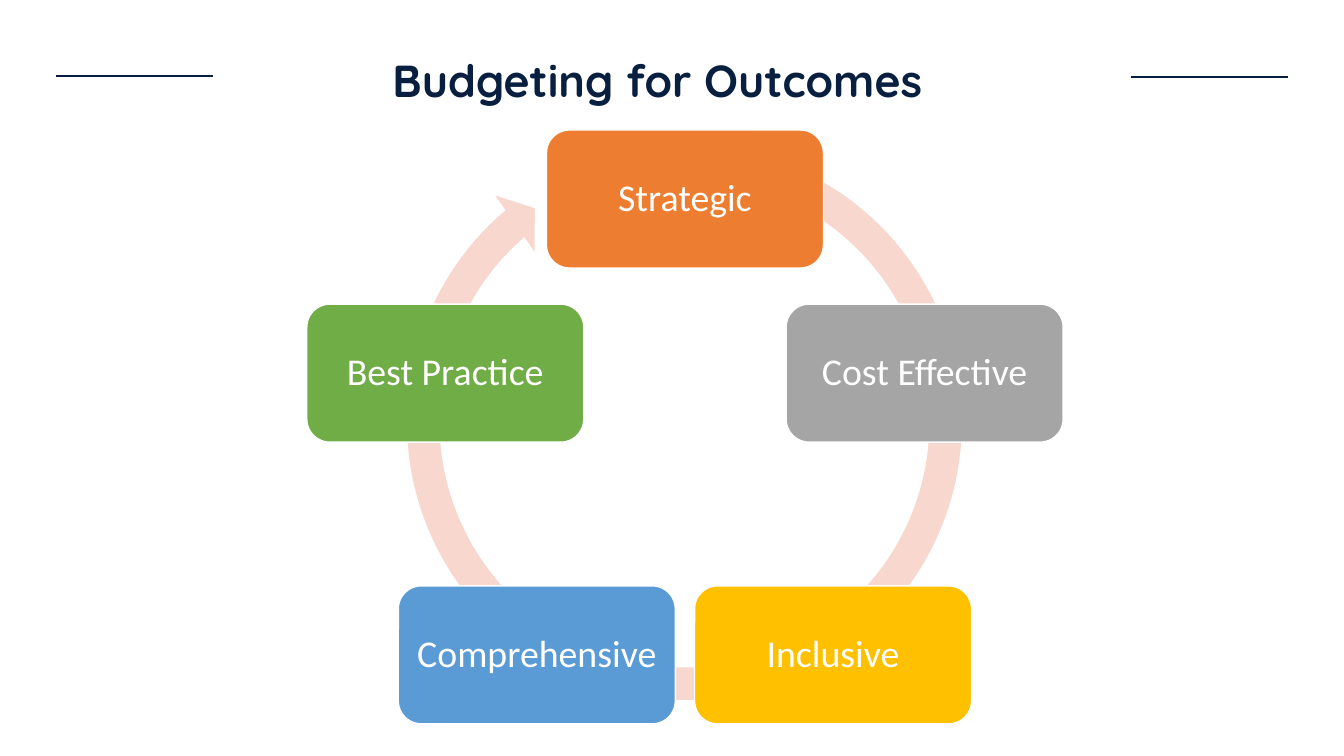
from math import cos, radians, sin

from lxml.etree import SubElement
from pptx import Presentation
from pptx.dml.color import RGBColor
from pptx.enum.shapes import MSO_CONNECTOR as CONN, MSO_SHAPE as SHAPE
from pptx.enum.text import MSO_ANCHOR as ANCHOR, MSO_AUTO_SIZE as AUTO, PP_ALIGN as ALIGN
from pptx.oxml.ns import qn
from pptx.util import Emu, Pt

TITLE = "Budgeting for Outcomes"
STEPS = [  # clockwise from the top
    ("Strategic", "ED7D31"),
    ("Cost Effective", "A5A5A5"),
    ("Inclusive", "FFC000"),
    ("Comprehensive", "5B9BD5"),
    ("Best Practice", "70AD47"),
]
NAVY, WHITE, BLUSH = "091F40", "FFFFFF", "F8D7CE"

SLIDE_W, SLIDE_H = 1344, 756
TITLE_BOX = (159, 48, 997, 65)
RULES = [(56, 213, 76), (1131, 1288, 77)]  # left, right, y
ARROW_BOX = (389, 127, 591, 591)
ARROW_PERCENT = (5.5, 330.7, 13773.3, 17387.6, 5.8)
CENTRE_X, CENTRE_Y, RADIUS = 685, 451, 252
STEP_W, STEP_H, STEP_INSET = 277, 138, 8


def px(n):
    return Emu(round(n * 914400 / 100.8))


def color(value):
    return RGBColor.from_string(value)


def write(p, text, font, size, hue, bold=False):
    p.alignment = ALIGN.CENTER
    r = p.add_run()
    r.text = text
    r.font.name, r.font.size, r.font.bold = font, Pt(size), bold
    r.font.color.rgb = color(hue)


def add_filled(s, kind, box, fill):
    sp = s.shapes.add_shape(kind, *map(px, box))
    sp.shadow.inherit = False
    sp.fill.solid()
    sp.fill.fore_color.rgb = color(fill)
    return sp


def add_title(s):
    tf = s.shapes.add_textbox(*map(px, TITLE_BOX)).text_frame
    tf.word_wrap = True
    tf.auto_size = AUTO.SHAPE_TO_FIT_TEXT
    write(tf.paragraphs[0], TITLE, "Quicksand", 32, NAVY, bold=True)


def add_rule(s, left, right, y):
    line = s.shapes.add_connector(CONN.STRAIGHT, px(left), px(y), px(right), px(y))
    line.line.color.rgb = color(NAVY)
    line.line.width = Pt(1)
    SubElement(line._element.spPr, qn("a:effectLst"))


def add_cycle_arrow(s):
    sp = add_filled(s, SHAPE.CIRCULAR_ARROW, ARROW_BOX, BLUSH)
    sp.line.fill.background()
    for i, percent in enumerate(ARROW_PERCENT):
        sp.adjustments[i] = percent / 100


def add_step(s, text, fill, angle):
    left = CENTRE_X + RADIUS * sin(angle) - STEP_W / 2
    top = CENTRE_Y - RADIUS * cos(angle) - STEP_H / 2
    sp = add_filled(s, SHAPE.ROUNDED_RECTANGLE, (left, top, STEP_W, STEP_H), fill)
    sp.line.color.rgb = color(WHITE)
    sp.line.width = Pt(1)
    tf = sp.text_frame
    tf.word_wrap = True
    tf.vertical_anchor = ANCHOR.MIDDLE
    tf.margin_left = tf.margin_right = px(STEP_INSET)
    tf.margin_top = tf.margin_bottom = px(STEP_INSET)
    p = tf.paragraphs[0]
    p.line_spacing = 0.9
    write(p, text, "Calibri", 27, WHITE)


def main():
    prs = Presentation()
    prs.slide_width, prs.slide_height = px(SLIDE_W), px(SLIDE_H)
    s = prs.slides.add_slide(prs.slide_layouts[6])
    add_title(s)
    for rule in RULES:
        add_rule(s, *rule)
    add_cycle_arrow(s)
    for i, (text, fill) in enumerate(STEPS):
        add_step(s, text, fill, radians(i * 360 / len(STEPS)))
    prs.save("out.pptx")


if __name__ == "__main__":
    main()
